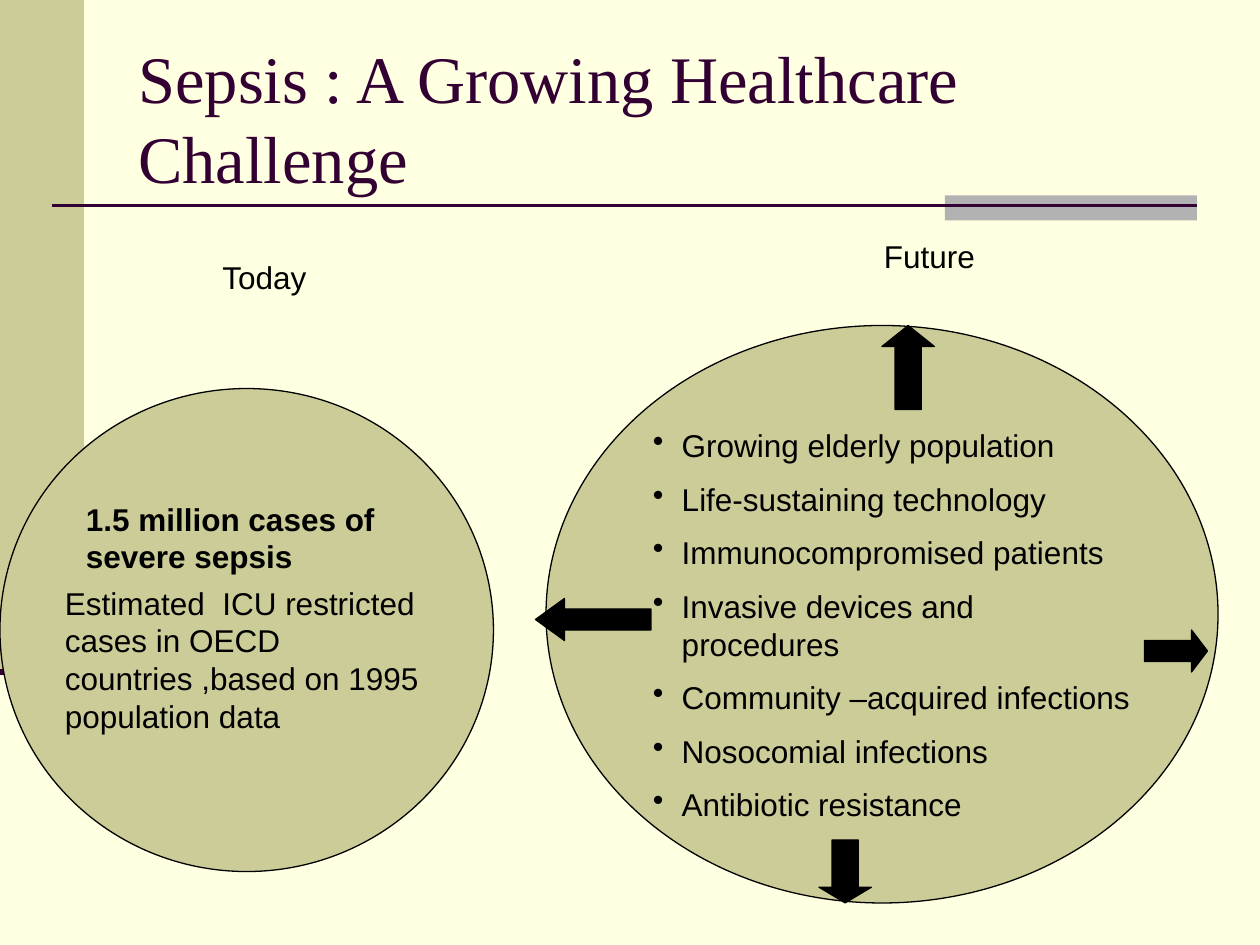
from dataclasses import dataclass

from lxml import etree
from pptx import Presentation
from pptx.dml.color import RGBColor
from pptx.enum.shapes import MSO_CONNECTOR, MSO_SHAPE
from pptx.enum.text import MSO_ANCHOR, MSO_AUTO_SIZE
from pptx.oxml.ns import qn
from pptx.slide import Slide
from pptx.util import Pt

RECTANGLE, ELLIPSE = MSO_SHAPE.RECTANGLE, MSO_SHAPE.OVAL
UP, DOWN = MSO_SHAPE.UP_ARROW, MSO_SHAPE.DOWN_ARROW
LEFT, RIGHT = MSO_SHAPE.LEFT_ARROW, MSO_SHAPE.RIGHT_ARROW
STRAIGHT = MSO_CONNECTOR.STRAIGHT
MIDDLE, TOP = MSO_ANCHOR.MIDDLE, MSO_ANCHOR.TOP
GROW, FIXED = MSO_AUTO_SIZE.SHAPE_TO_FIT_TEXT, MSO_AUTO_SIZE.NONE

CREAM, KHAKI, GREY, PLUM, BLACK = "FFFFE1", "CCCC99", "B2B2B2", "330033", "000000"
BODY_FONT = {"name": "Arial", "size": Pt(18), "bold": False}
STRONG_FONT = BODY_FONT | {"bold": True}
TITLE_FONT = {"name": "Times New Roman", "size": Pt(38), "bold": False}
BODY_FRAME = {"word_wrap": True, "vertical_anchor": TOP, "auto_size": GROW}
TITLE_FRAME = {"word_wrap": True, "vertical_anchor": MIDDLE, "auto_size": FIXED}
PARAGRAPH_GAP = 9
BULLET_INDENT = 16.5


@dataclass(frozen=True)
class Box:
    left: float
    top: float
    width: float
    height: float

    def lengths(self) -> list[Pt]:
        return [Pt(side) for side in (self.left, self.top, self.width, self.height)]


@dataclass(frozen=True)
class Figure:
    preset: MSO_SHAPE
    box: Box
    fill: str
    outline: str | None = None
    adjustments: tuple[float, ...] = ()


@dataclass(frozen=True)
class Rule:
    start: float
    end: float
    height: float
    weight: float


@dataclass(frozen=True)
class Passage:
    box: Box
    lines: tuple[str, ...]
    font: dict
    frame: dict
    color: str = BLACK
    bulleted: bool = False


def set_color(color_owner, hex_color: str) -> None:
    color_owner.rgb = RGBColor.from_string(hex_color)


def apply_format(target, values: dict) -> None:
    for attribute, value in values.items():
        setattr(target, attribute, value)


def draw_figure(slide: Slide, figure: Figure) -> None:
    shape = slide.shapes.add_shape(figure.preset, *figure.box.lengths())
    shape.shadow.inherit = False
    shape.fill.solid()
    set_color(shape.fill.fore_color, figure.fill)
    if figure.outline:
        set_color(shape.line.color, figure.outline)
        shape.line.width = Pt(0.75)
    else:
        shape.line.fill.background()
    for index, value in enumerate(figure.adjustments):
        shape.adjustments[index] = value


def draw_rule(slide: Slide, rule: Rule) -> None:
    connector = slide.shapes.add_connector(
        STRAIGHT, Pt(rule.start), Pt(rule.height), Pt(rule.end), Pt(rule.height)
    )
    set_color(connector.line.color, PLUM)
    connector.line.width = Pt(rule.weight)
    etree.SubElement(connector._element.spPr, qn("a:effectLst"))


def add_bullet(paragraph) -> None:
    properties = paragraph._p.get_or_add_pPr()
    properties.set("marL", str(Pt(BULLET_INDENT)))
    properties.set("indent", str(-Pt(BULLET_INDENT)))
    etree.SubElement(properties, qn("a:buChar")).set("char", "•")


def write_passage(slide: Slide, passage: Passage) -> None:
    frame = slide.shapes.add_textbox(*passage.box.lengths()).text_frame
    apply_format(frame, passage.frame)
    for index, line in enumerate(passage.lines):
        paragraph = frame.add_paragraph() if index else frame.paragraphs[0]
        if index:
            paragraph.space_before = Pt(PARAGRAPH_GAP)
        if passage.bulleted:
            add_bullet(paragraph)
        run = paragraph.add_run()
        run.text = line
        apply_format(run.font, passage.font)
        set_color(run.font.color, passage.color)


SIDE_BAND = Figure(RECTANGLE, Box(0, 0, 48, 384), KHAKI)
TITLE_ACCENT = Figure(RECTANGLE, Box(540, 111.6, 144, 14.4), GREY)
RULES = (Rule(30, 684, 117.6, 1.5), Rule(0, 48, 384, 3.5))
TODAY_CIRCLE = Figure(ELLIPSE, Box(0, 222, 282, 276), KHAKI, BLACK)
FUTURE_CIRCLE = Figure(ELLIPSE, Box(312, 186, 384, 330), KHAKI, BLACK)
GROWTH_ARROWS = [
    Figure(preset, box, BLACK, BLACK, (0.5, head))
    for preset, box, head in (
        (UP, Box(504, 186, 30, 48), 0.4),
        (LEFT, Box(306, 342, 66, 24), 0.69),
        (DOWN, Box(468, 480, 30, 36), 0.3),
        (RIGHT, Box(654, 360, 36, 24), 0.38),
    )
]

TITLE = Passage(
    Box(72, 21.6, 612, 90),
    ("Sepsis : A Growing Healthcare Challenge",),
    TITLE_FONT,
    TITLE_FRAME,
    PLUM,
)
HEADINGS = (
    Passage(Box(120, 144, 108, 29), ("Today",), BODY_FONT, BODY_FRAME),
    Passage(Box(498, 132, 108, 29), ("Future",), BODY_FONT, BODY_FRAME),
)
TODAY_TEXTS = (
    Passage(
        Box(42, 282, 186, 50.4),
        ("1.5 million cases of severe sepsis",),
        STRONG_FONT,
        BODY_FRAME,
    ),
    Passage(
        Box(30, 330, 240, 93.6),
        ("Estimated  ICU restricted cases in OECD countries ,based on 1995 population data",),
        BODY_FONT,
        BODY_FRAME,
    ),
)
FUTURE_CAUSES = Passage(
    Box(366, 240, 288, 224),
    (
        "Growing elderly population",
        "Life-sustaining technology",
        "Immunocompromised patients",
        "Invasive devices and procedures",
        "Community –acquired infections",
        "Nosocomial infections",
        "Antibiotic resistance",
    ),
    BODY_FONT,
    BODY_FRAME,
    bulleted=True,
)


def main() -> None:
    deck = Presentation()
    apply_format(deck, {"slide_width": Pt(720), "slide_height": Pt(540)})
    slide = deck.slides.add_slide(deck.slide_layouts[6])
    slide.background.fill.solid()
    set_color(slide.background.fill.fore_color, CREAM)

    parts = (
        SIDE_BAND, TITLE_ACCENT, *RULES, TITLE, *HEADINGS,
        TODAY_CIRCLE, *TODAY_TEXTS, FUTURE_CIRCLE, FUTURE_CAUSES, *GROWTH_ARROWS,
    )
    painters = {Figure: draw_figure, Rule: draw_rule, Passage: write_passage}
    for part in parts:
        painters[type(part)](slide, part)
    deck.save("out.pptx")


if __name__ == "__main__":
    main()
